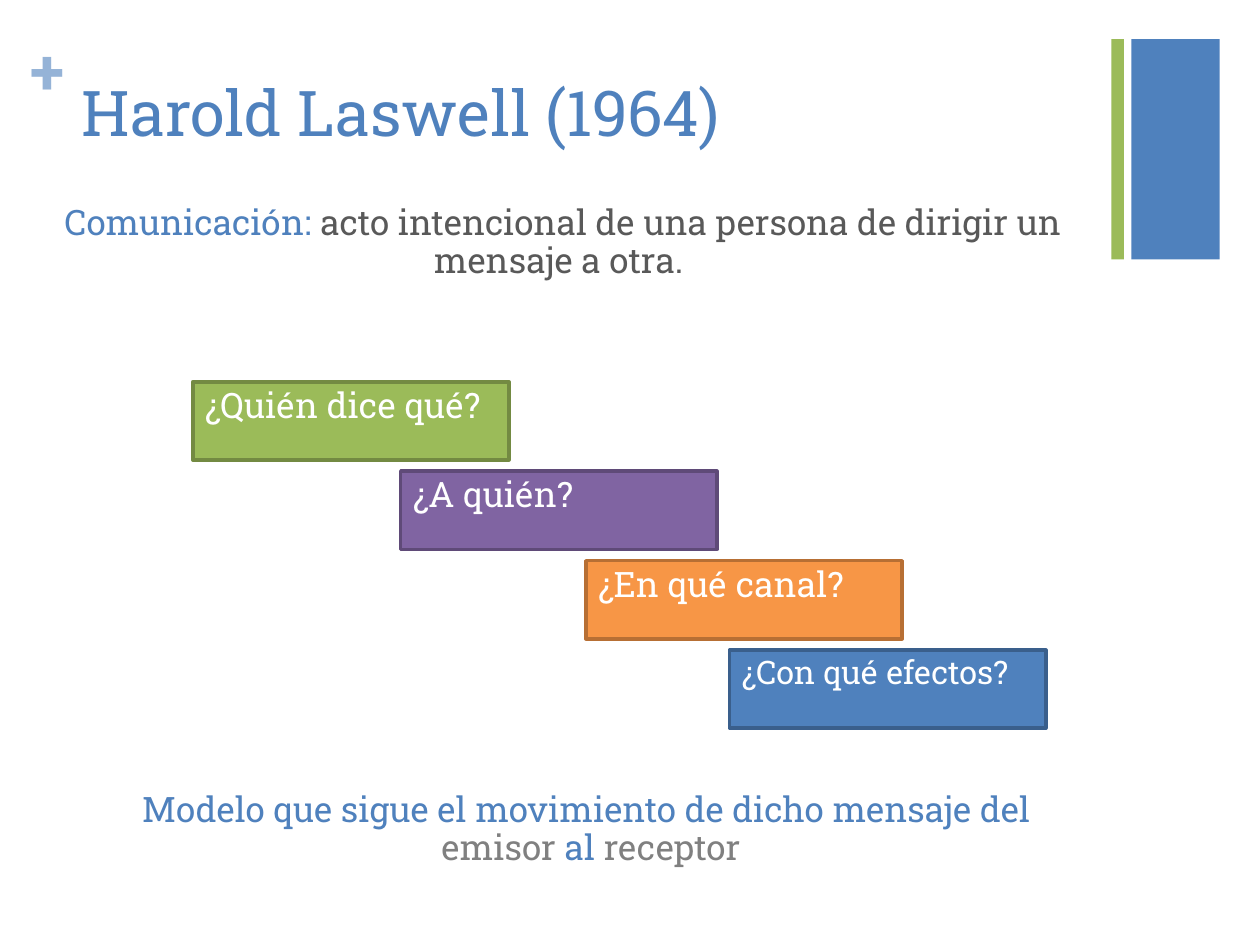
from pptx import Presentation
from pptx import util as u
from pptx.dml.color import RGBColor
from pptx.enum import shapes, text

FONT = "Roboto Slab"
COLORS = {
    "blue": "4F81BD", "light blue": "95B3D7", "green": "9BBB59",
    "purple": "8064A2", "orange": "F79646", "white": "FFFFFF",
    "dark grey": "595959", "grey": "808080",
    "blue edge": "3A5F8C", "green edge": "738A42",
    "purple edge": "5F4A78", "orange edge": "B76F34",
}

# Content: each text is a list of (words, colour)
TITLE = [("Harold Laswell (1964)", "blue")]
DEFINITION = [("Comunicación: ", "blue"),
              ("acto intencional de una persona de dirigir un mensaje a otra. ", "dark grey")]
MODEL = [("Modelo que sigue el movimiento de dicho mensaje del \v", "blue"),
         ("emisor", "grey"), (" al ", "blue"), ("receptor", "grey")]
# Question, colour, left edge, text size
QUESTIONS = [
    ("¿Quién dice qué?", "green", 1.53, 20),
    ("¿A quién?", "purple", 3.18, 20),
    ("¿En qué canal?", "orange", 4.65, 20),
    ("¿Con qué efectos?", "blue", 5.79, 18.5),
]
# Colour, left edge, width
BARS = [("blue", 8.98, 0.7), ("green", 8.82, 0.1)]

TEXT_WIDTH, TEXT_HEIGHT = 8.26, 1.36
STEP_TOP, STEP_PITCH, STEP_WIDTH, STEP_HEIGHT = 3.03, 0.71, 2.51, 0.62


def rgb(name):
    return RGBColor.from_string(COLORS[name])


def place(box, left, top, width, height):
    for side, value in zip(("left", "top", "width", "height"), (left, top, width, height)):
        setattr(box, side, u.Inches(value))


def write(box, spans, size, align=text.PP_ALIGN.LEFT, spacing=1.0, bold=False, inset=None):
    frame = box.text_frame
    frame_format = {"word_wrap": True, "auto_size": text.MSO_AUTO_SIZE.NONE,
                    "vertical_anchor": text.MSO_ANCHOR.TOP}
    if inset is not None:
        for side in ("left", "top", "right", "bottom"):
            frame_format["margin_" + side] = u.Inches(inset)
    for name, value in frame_format.items():
        setattr(frame, name, value)
    para = frame.paragraphs[0]
    para.alignment, para.line_spacing = align, spacing
    for words, color in spans:
        span = para.add_run()
        span.text = words.rstrip("\v")
        for name, value in {"name": FONT, "size": u.Pt(size), "bold": bold}.items():
            setattr(span.font, name, value)
        span.font.color.rgb = rgb(color)
        if words.endswith("\v"):
            para.add_line_break()


def add_block(page, color, left, top, width, height, edge=None):
    box = page.shapes.add_shape(shapes.MSO_SHAPE.RECTANGLE,
                                *map(u.Inches, (left, top, width, height)))
    box.shadow.inherit = False
    box.fill.solid()
    box.fill.fore_color.rgb = rgb(color)
    if edge:
        box.line.color.rgb, box.line.width = rgb(edge), u.Pt(2)
    else:
        box.line.fill.background()
    return box


def add_text(page, left, top, width, height, spans, size, **options):
    box = page.shapes.add_textbox(*map(u.Inches, (left, top, width, height)))
    write(box, spans, size, **options)


def main():
    deck = Presentation()
    deck.slide_width, deck.slide_height = u.Inches(10), u.Inches(7.5)
    page = deck.slides.add_slide(deck.slide_layouts[5])

    # Corner decoration
    for color, left, width in BARS:
        add_block(page, color, left, 0.31, width, 1.75)
    add_text(page, 0.24, 0.25, 0.29, 0.61, [("+", "light blue")], 36, bold=True, inset=0)

    # Title
    place(page.shapes.title, 0.55, 0.53, TEXT_WIDTH, 1.22)
    write(page.shapes.title, TITLE, 36)

    # Definition above and model below the questions
    for spans, left, top in ((DEFINITION, 0.34, 1.58), (MODEL, 0.56, 6.24)):
        add_text(page, left, top, TEXT_WIDTH, TEXT_HEIGHT, spans, 20,
                 align=text.PP_ALIGN.CENTER, spacing=0.9)

    # Staircase of questions
    for row, (question, color, left, size) in enumerate(QUESTIONS):
        box = add_block(page, color, left, STEP_TOP + row * STEP_PITCH,
                        STEP_WIDTH, STEP_HEIGHT, color + " edge")
        write(box, [(question, "white")], size, spacing=0.9)

    deck.save("out.pptx")


if __name__ == "__main__":
    main()
